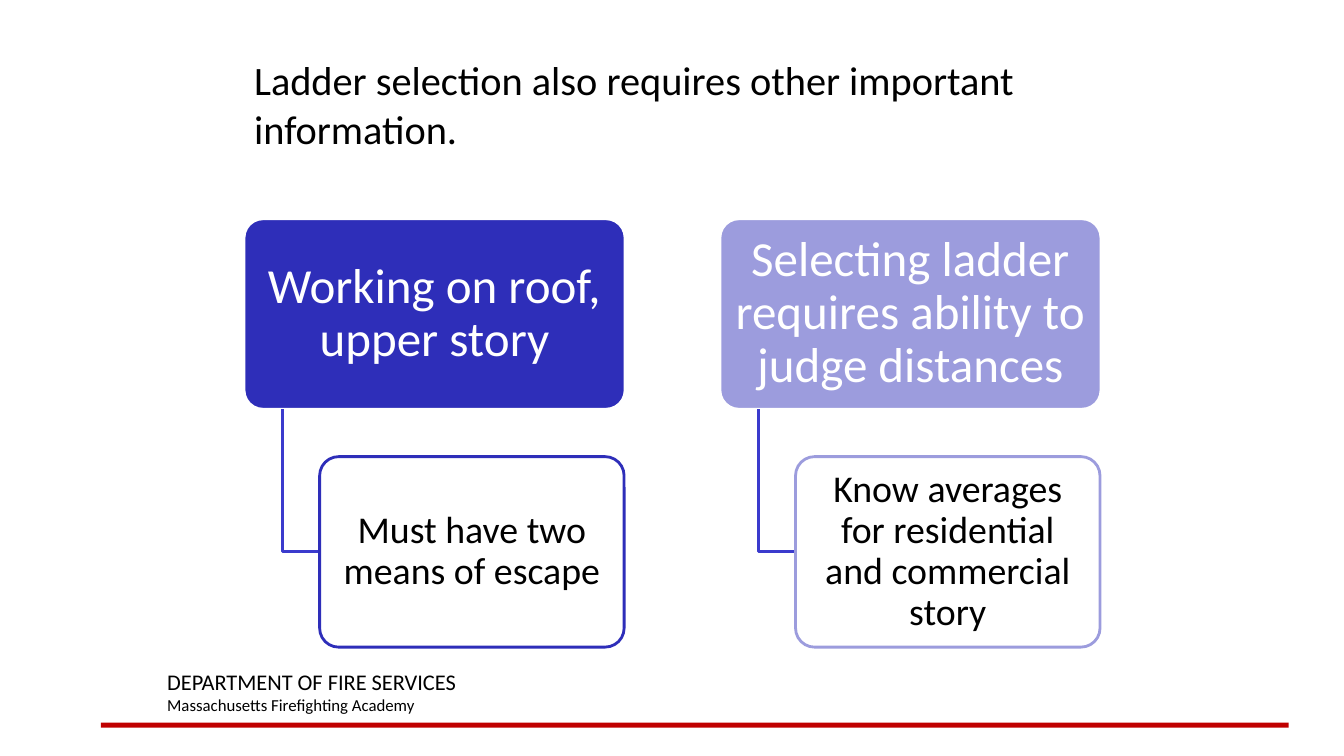
"""Builds a slide on what else ladder selection requires."""
from dataclasses import dataclass

from lxml import etree
from pptx import Presentation
from pptx.dml.color import RGBColor
from pptx.enum import shapes, text
from pptx.oxml import ns
from pptx.util import Inches, Pt


@dataclass(frozen=True)
class Theme:
    font: str = "Calibri"
    white: str = "FFFFFF"
    black: str = "000000"
    red: str = "C00000"
    branch: str = "3B3BCD"
    title_size: float = 28.8
    topic_size: float = 35
    detail_size: float = 27
    department_size: float = 16
    academy_size: float = 12
    line_width: float = 2


@dataclass(frozen=True)
class Box:
    left: float
    top: float
    width: float
    height: float

    def lengths(self) -> list:
        return [Inches(v) for v in (self.left, self.top, self.width, self.height)]


@dataclass(frozen=True)
class Consideration:
    topic: str
    detail: str
    color: str


THEME = Theme()
CONSIDERATIONS = [
    Consideration("Working on roof, upper story", "Must have two means of escape", "2E2EB9"),
    Consideration("Selecting ladder requires ability to judge distances",
                  "Know averages for residential and commercial story", "9C9CDD"),
]
FIRST_LEFT, COLUMN_STEP = 2.42, 4.72
TOPIC_TOP, DETAIL_TOP, CARD_HEIGHT = 2.17, 4.53, 1.89
TOPIC_WIDTH, DETAIL_WIDTH = 3.78, 3.02
BRANCH_INDENT, DETAIL_INDENT = 0.38, 0.75


def add_run(paragraph, wording: str, size: float, color: str) -> None:
    run = paragraph.add_run()
    run.text = wording
    run.font.name = THEME.font
    run.font.size = Pt(size)
    run.font.color.rgb = RGBColor.from_string(color)


def set_line(shape, color: str) -> None:
    shape.shadow.inherit = False
    shape.line.color.rgb = RGBColor.from_string(color)
    shape.line.width = Pt(THEME.line_width)


def add_card(slide, box: Box, wording: str, size: float, fill: str, line: str, ink: str):
    card = slide.shapes.add_shape(shapes.MSO_SHAPE.ROUNDED_RECTANGLE, *box.lengths())
    card.adjustments[0] = 0.1
    card.fill.solid()
    card.fill.fore_color.rgb = RGBColor.from_string(fill)
    set_line(card, line)
    frame = card.text_frame
    frame.word_wrap = True
    frame.vertical_anchor = text.MSO_ANCHOR.MIDDLE
    frame.margin_left = frame.margin_right = Inches(0.1)
    frame.margin_top = frame.margin_bottom = Inches(0.1)
    paragraph = frame.paragraphs[0]
    paragraph.alignment = text.PP_ALIGN.CENTER
    paragraph.line_spacing = 0.9
    add_run(paragraph, wording, size, ink)
    return card


def add_branch(slide, left: float) -> None:
    start = left + BRANCH_INDENT
    middle = DETAIL_TOP + CARD_HEIGHT / 2
    outline = slide.shapes.build_freeform(
        Inches(start), Inches(TOPIC_TOP + CARD_HEIGHT))
    outline.add_line_segments(
        [(Inches(start), Inches(middle)), (Inches(left + DETAIL_INDENT), Inches(middle))],
        close=False)
    branch = outline.convert_to_shape()
    branch.fill.background()
    set_line(branch, THEME.branch)


def add_consideration(slide, left: float, item: Consideration) -> None:
    add_card(slide, Box(left, TOPIC_TOP, TOPIC_WIDTH, CARD_HEIGHT), item.topic,
             THEME.topic_size, item.color, THEME.white, THEME.white)
    add_branch(slide, left)
    detail = add_card(slide, Box(left + DETAIL_INDENT, DETAIL_TOP, DETAIL_WIDTH, CARD_HEIGHT),
                      item.detail, THEME.detail_size, THEME.white, item.color, THEME.black)
    tint = detail.fill._xPr.find(ns.qn("a:solidFill"))[0]
    etree.SubElement(tint, ns.qn("a:alpha")).set("val", "90000")


def add_title(slide) -> None:
    title = slide.shapes.title
    title.left, title.top, title.width, title.height = Box(2.42, 0.5, 9.11, 1).lengths()
    frame = title.text_frame
    frame.word_wrap = True
    frame.auto_size = text.MSO_AUTO_SIZE.NONE
    frame.vertical_anchor = text.MSO_ANCHOR.TOP
    frame.paragraphs[0].alignment = text.PP_ALIGN.LEFT
    add_run(frame.paragraphs[0], "Ladder selection also requires other important information.",
            THEME.title_size, THEME.black)


def add_footer(slide) -> None:
    rule = slide.shapes.add_shape(shapes.MSO_SHAPE.RECTANGLE, *Box(1, 7.17, 11.78, 0.05).lengths())
    rule.shadow.inherit = False
    rule.fill.solid()
    rule.fill.fore_color.rgb = RGBColor.from_string(THEME.red)
    rule.line.fill.background()
    frame = slide.shapes.add_textbox(*Box(1.56, 6.58, 5.67, 0.57).lengths()).text_frame
    frame.word_wrap = True
    frame.auto_size = text.MSO_AUTO_SIZE.SHAPE_TO_FIT_TEXT
    add_run(frame.paragraphs[0], "DEPARTMENT OF FIRE SERVICES",
            THEME.department_size, THEME.black)
    add_run(frame.add_paragraph(), "Massachusetts Firefighting Academy",
            THEME.academy_size, THEME.black)


def main() -> None:
    deck = Presentation()
    deck.slide_width, deck.slide_height = Inches(13.33), Inches(7.5)
    slide = deck.slides.add_slide(deck.slide_layouts.get_by_name("Title Only"))
    add_footer(slide)
    add_title(slide)
    for column, item in enumerate(CONSIDERATIONS):
        add_consideration(slide, FIRST_LEFT + column * COLUMN_STEP, item)
    deck.save("out.pptx")


if __name__ == "__main__":
    main()
